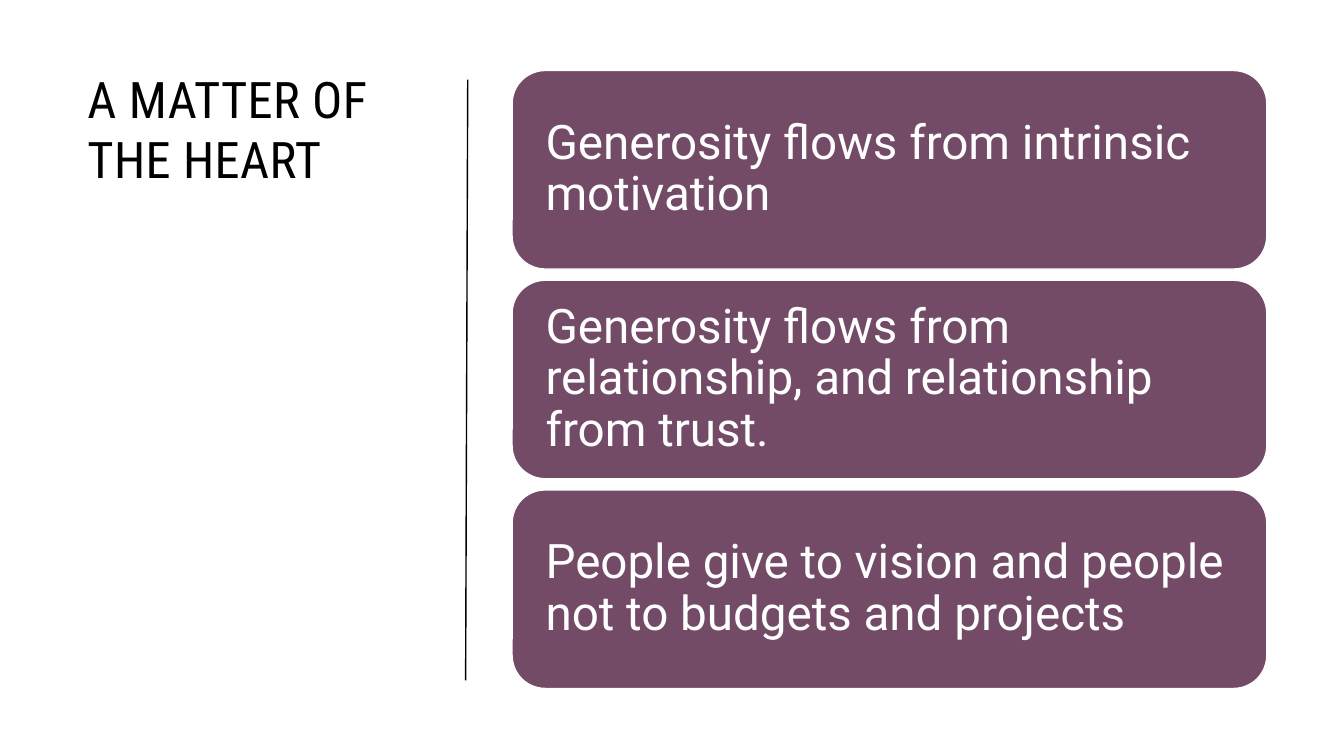
from pptx import Presentation
from pptx.dml.color import RGBColor as Rgb
from pptx.enum.shapes import MSO_CONNECTOR as Conn, MSO_SHAPE as Shape
from pptx.enum.text import MSO_ANCHOR as Anchor, PP_ALIGN as Align
from pptx.oxml.ns import qn
from pptx.util import Pt
from lxml import etree

TITLE = "A MATTER OF THE HEART"
POINTS = [
    "Generosity flows from intrinsic motivation",
    "Generosity flows from relationship, and relationship from trust.",
    "People give to vision and people not to budgets and projects",
]
THEME = {
    "plum": Rgb(0x73, 0x4B, 0x67),
    "white": Rgb(255, 255, 255),
    "black": Rgb(0, 0, 0),
    "head": ("Roboto Condensed", 36),
    "body": ("Roboto", 34),
}
LEFT, TOP, WIDE, HIGH, STEP = 365.8, 50.4, 539.1, 141.8, 149.8
INSET = 17


def style(para, kind, color):
    name, size = THEME[kind]
    para.alignment = Align.LEFT
    para.font.name = name
    para.font.size = Pt(size)
    para.font.color.rgb = THEME[color]


def add_title(slide):
    box = slide.shapes.add_textbox(Pt(55.4), Pt(44.9), Pt(260.6), Pt(414))
    frame = box.text_frame
    frame.word_wrap = True
    para = frame.paragraphs[0]
    run = para.add_run()
    run.text = TITLE
    style(para, "head", "black")
    run.font._element.set("spc", "30")


def add_card(slide, row, text):
    card = slide.shapes.add_shape(
        Shape.ROUNDED_RECTANGLE,
        Pt(LEFT), Pt(TOP + row * STEP), Pt(WIDE), Pt(HIGH))
    card.shadow.inherit = False
    card.fill.solid()
    card.fill.fore_color.rgb = THEME["plum"]
    card.line.color.rgb = THEME["white"]
    card.line.width = Pt(1)
    frame = card.text_frame
    frame.word_wrap = True
    frame.vertical_anchor = Anchor.MIDDLE
    frame.margin_left = frame.margin_right = Pt(INSET)
    frame.margin_top = frame.margin_bottom = Pt(INSET)
    para = frame.paragraphs[0]
    para.text = text
    para.line_spacing = 0.9
    style(para, "body", "white")


def add_rule(slide):
    rule = slide.shapes.add_connector(
        Conn.STRAIGHT, Pt(332.6), Pt(486), Pt(334.1), Pt(56.9))
    rule.line.color.rgb = THEME["black"]
    rule.line.width = Pt(1)
    etree.SubElement(rule._element.spPr, qn("a:effectLst"))


def main():
    deck = Presentation()
    deck.slide_width, deck.slide_height = Pt(960), Pt(540)
    slide = deck.slides.add_slide(deck.slide_layouts[6])
    add_title(slide)
    for row, text in enumerate(POINTS):
        add_card(slide, row, text)
    add_rule(slide)
    deck.save("out.pptx")


if __name__ == "__main__":
    main()
